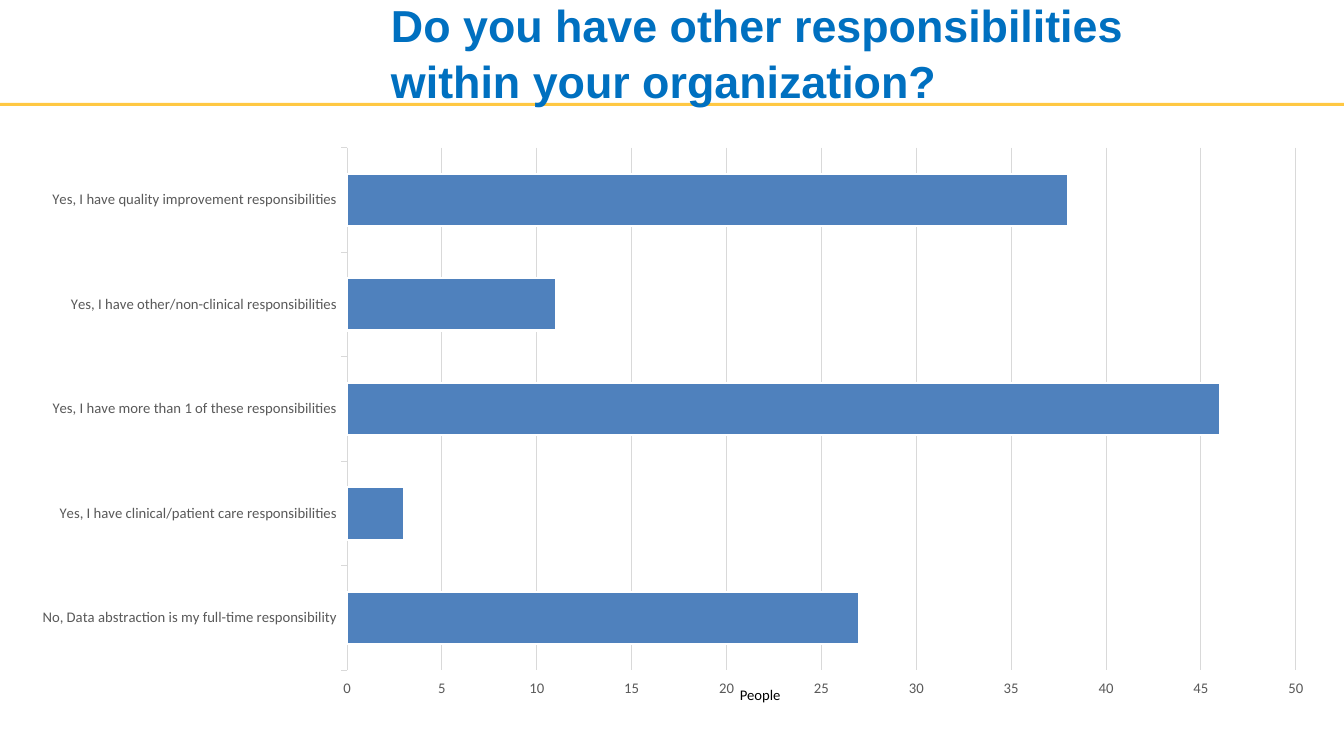
from lxml import etree
from pptx import Presentation
from pptx.chart.data import CategoryChartData
from pptx.dml.color import RGBColor
from pptx.enum.chart import XL_CHART_TYPE, XL_TICK_MARK
from pptx.enum.shapes import MSO_SHAPE
from pptx.enum.text import MSO_ANCHOR
from pptx.util import Inches, Pt

BAR = XL_CHART_TYPE.BAR_CLUSTERED
OUTSIDE = XL_TICK_MARK.OUTSIDE
RECTANGLE = MSO_SHAPE.RECTANGLE
TOP, MIDDLE = MSO_ANCHOR.TOP, MSO_ANCHOR.MIDDLE

TITLE = "Do you have other responsibilities within your organization?"
AXIS_LABEL = "People"
ANSWERS = {
    "No, Data abstraction is my full-time responsibility": 27,
    "Yes, I have clinical/patient care responsibilities": 3,
    "Yes, I have more than 1 of these responsibilities": 46,
    "Yes, I have other/non-clinical responsibilities": 11,
    "Yes, I have quality improvement responsibilities": 38,
}
WIDTH, HEIGHT = 13.33, 7.5
HEADER = 1.02
PLOT_SHARES = {"x": 0.25, "y": 0.02, "w": 0.73, "h": 0.91}
BLUE, GOLD, BAR_BLUE = "0070C0", "FFC843", "4F81BD"
BLACK, WHITE, GREY, PALE = "000000", "FFFFFF", "595959", "D9D9D9"


def color(value):
    return RGBColor.from_string(value)


def set_font(font, name, size, value, bold=False):
    font.name, font.size, font.bold = name, Pt(size), bold
    font.color.rgb = color(value)


def set_line(line, value, width):
    line.color.rgb = color(value)
    line.width = Pt(width)


def add_text(s, box, text, anchor, font, spacing=1.0):
    tf = s.shapes.add_textbox(*map(Inches, box)).text_frame
    tf.word_wrap = True
    tf.vertical_anchor = anchor
    p = tf.paragraphs[0]
    p.line_spacing = spacing
    r = p.add_run()
    r.text = text
    set_font(r.font, *font)


def place_plot(chart):
    """Fix the inner plot area at its shares of the chart frame."""
    plot_area = chart.plots[0]._element.getparent()
    ns = etree.QName(plot_area).namespace
    for old in plot_area.findall(f"{{{ns}}}layout"):
        plot_area.remove(old)
    layout = etree.Element(f"{{{ns}}}layout")
    manual = etree.SubElement(layout, f"{{{ns}}}manualLayout")
    settings = [("layoutTarget", "inner"), ("xMode", "edge"), ("yMode", "edge")]
    for tag, val in settings + list(PLOT_SHARES.items()):
        etree.SubElement(manual, f"{{{ns}}}{tag}").set("val", str(val))
    plot_area.insert(0, layout)


def add_answers_chart(s):
    data = CategoryChartData()
    data.categories = list(ANSWERS)
    data.add_series("Series 1", list(ANSWERS.values()))
    box = map(Inches, (0.22, 1.35, 12.89, 5.7))
    chart = s.shapes.add_chart(BAR, *box, data).chart
    chart.has_legend = chart.has_title = False
    set_font(chart.font, "Calibri", 10.5, BLACK)

    plot = chart.plots[0]
    plot.gap_width = 100
    plot.vary_by_categories = False
    bars = plot.series[0].format
    bars.fill.solid()
    bars.fill.fore_color.rgb = color(BAR_BLUE)
    set_line(bars.line, WHITE, 1.5)

    people, answers = chart.value_axis, chart.category_axis
    for axis in (people, answers):
        axis.major_tick_mark = OUTSIDE
        set_font(axis.tick_labels.font, "Calibri", 10.5, GREY)
    set_line(answers.format.line, PALE, 0.75)
    people.minimum_scale, people.maximum_scale, people.major_unit = 0, 50, 5
    people.format.line.fill.background()
    set_line(people.major_gridlines.format.line, PALE, 0.75)
    place_plot(chart)


def main():
    prs = Presentation()
    prs.slide_width, prs.slide_height = Inches(WIDTH), Inches(HEIGHT)
    s = prs.slides.add_slide(prs.slide_layouts[6])

    rule = s.shapes.add_shape(RECTANGLE, 0, Inches(HEADER), prs.slide_width, Inches(0.03))
    rule.shadow.inherit = False
    rule.fill.solid()
    rule.fill.fore_color.rgb = color(GOLD)
    rule.line.fill.background()

    add_answers_chart(s)
    add_text(s, (3.78, 0, 8.67, HEADER), TITLE, MIDDLE, ("Arial", 32, BLUE, True), 1.05)
    add_text(s, (7.24, 6.75, 3.38, 0.28), AXIS_LABEL, TOP, ("Calibri", 10.5, BLACK))
    prs.save("out.pptx")


if __name__ == "__main__":
    main()
